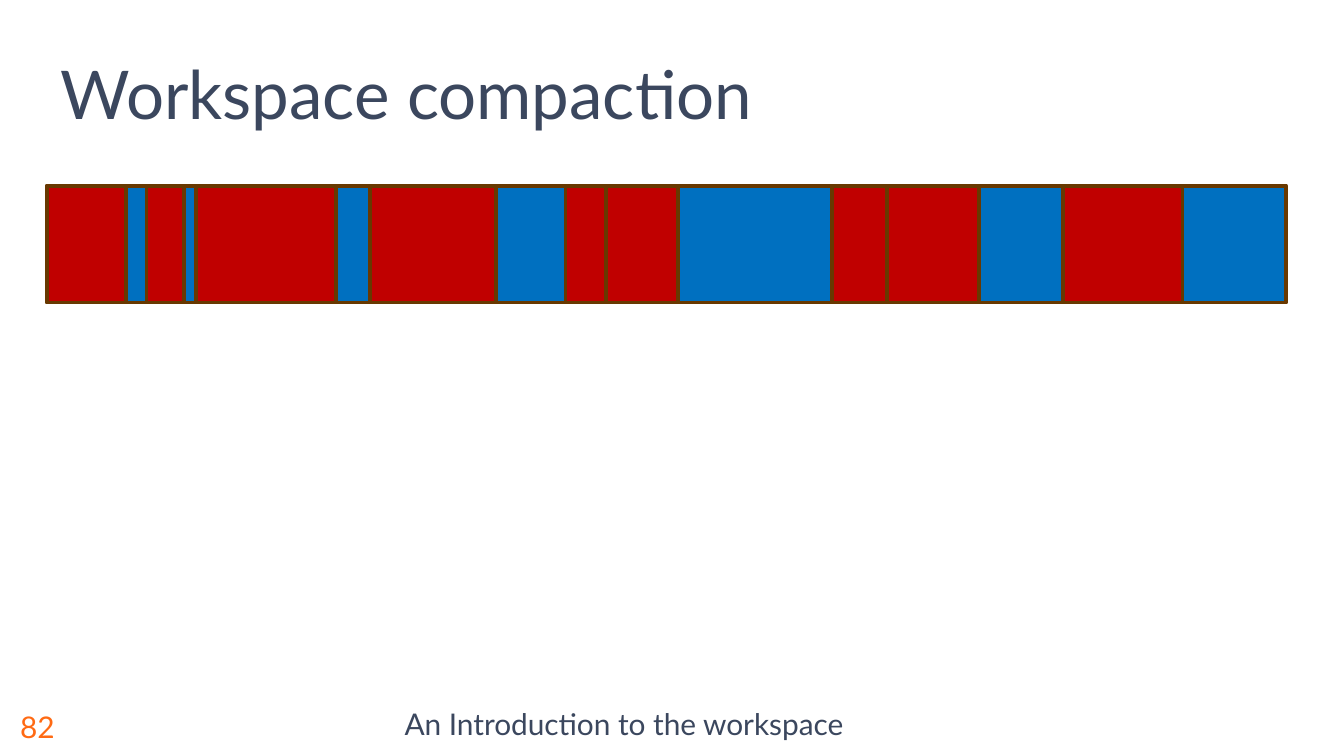
"""Build the workspace compaction slide: one memory bar with used blocks."""
from pptx import Presentation
from pptx.dml.color import RGBColor as Rgb
from pptx.enum.shapes import MSO_SHAPE as Shape
from pptx.enum.text import MSO_ANCHOR as Anchor, PP_ALIGN as Align
from pptx.util import Cm, Pt

COLORS = {"free": "0070C0", "used": "C00000", "edge": "683800",
          "text": "3B475E", "page": "FF6A13"}
FONT = "Lato"
TEXTS = [
    ("An Introduction to the workspace", (1.98, 13.18, 19.63, 1.12),
     16, "text", Anchor.MIDDLE, Align.CENTER, 0.8),
    ("82", (0.13, 13.18, 1.85, 1.12),
     16, "page", Anchor.MIDDLE, Align.LEFT, 1.0),
    ("Workspace compaction", (0.89, 0.74, 20.83, 1.9),
     36, "text", Anchor.BOTTOM, Align.LEFT, 1.0),
]
TOP, HEIGHT = 3.51, 2.21
BAR = (0.89, 23.42)
USED = [(0.89, 1.5), (2.77, 0.71), (3.71, 2.64), (6.99, 2.39), (10.69, 1.07),
        (11.46, 1.35), (15.72, 1.07), (16.76, 1.75), (20.09, 2.26)]


def color(name):
    return Rgb.from_string(COLORS[name])


def add_text(slide, text, place, size, tint, anchor, align, space):
    frame = slide.shapes.add_textbox(*map(Cm, place)).text_frame
    frame.word_wrap = True
    frame.vertical_anchor = anchor
    para = frame.paragraphs[0]
    para.text = text
    para.alignment = align
    para.line_spacing = space
    para.font.name = FONT
    para.font.size = Pt(size)
    para.font.color.rgb = color(tint)


def add_block(slide, left, width, kind):
    place = map(Cm, (left, TOP, width, HEIGHT))
    block = slide.shapes.add_shape(Shape.RECTANGLE, *place)
    block.shadow.inherit = False
    block.fill.solid()
    block.fill.fore_color.rgb = color(kind)
    block.line.color.rgb = color("edge")
    block.line.width = Pt(2)


def main():
    deck = Presentation()
    deck.slide_width, deck.slide_height = Cm(25.4), Cm(14.29)
    slide = deck.slides.add_slide(deck.slide_layouts[6])
    for item in TEXTS:
        add_text(slide, *item)
    add_block(slide, *BAR, "free")
    for left, width in USED:
        add_block(slide, left, width, "used")
    deck.save("out.pptx")


if __name__ == "__main__":
    main()
